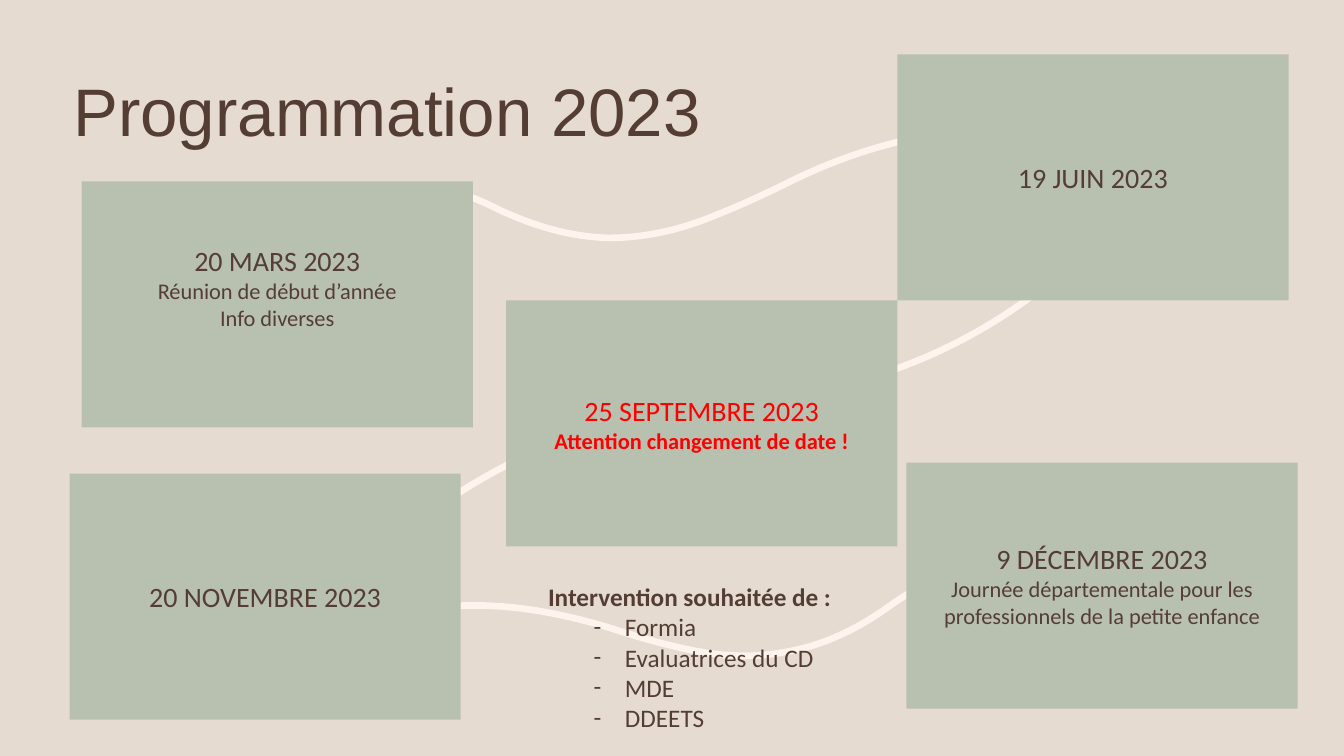
import pptx
import pptx.util
import pptx.dml.color
import pptx.enum.shapes
import pptx.enum.text
import pptx.oxml.ns
import lxml.etree
from dataclasses import dataclass

Inches, Pt = pptx.util.Inches, pptx.util.Pt
RGB = pptx.dml.color.RGBColor.from_string
ALIGN = pptx.enum.text.PP_ALIGN
ANCHOR = pptx.enum.text.MSO_ANCHOR


@dataclass
class Theme:
    back: str = "E6DBD0"
    card: str = "B8C0B0"
    wave: str = "FEF3ED"
    ink: str = "543E34"
    alert: str = "FF0000"
    head: str = "Arial"
    body: str = "Calibri"
    title: int = 48
    date: int = 20
    note: int = 16
    list: int = 18


theme = Theme()


def write(frame, lines):
    """Fill a frame with one paragraph for each (text, align, format)."""
    frame.word_wrap = True
    for i, (text, align, form) in enumerate(lines):
        para = frame.paragraphs[0] if i == 0 else frame.add_paragraph()
        para.alignment = align
        run = para.add_run()
        run.text = text
        run.font.color.rgb = RGB(form["color"])
        for key in ("name", "size", "bold"):
            setattr(run.font, key, form[key])


def style(size, color=theme.ink, name=theme.body, bold=False):
    return {"name": name, "size": Pt(size), "bold": bold, "color": color}


deck = pptx.Presentation()
deck.slide_width, deck.slide_height = Inches(13.33), Inches(7.5)
slide = deck.slides.add_slide(deck.slide_layouts[6])
slide.background.fill.solid()
slide.background.fill.fore_color.rgb = RGB(theme.back)
shapes = slide.shapes

# Waves: a start point, then cubic curves of three points each
waves = [
    [(8.33, 3.83), (9.13, 3.63), (9.85, 3.27), (10.47, 2.75)],
    [(5.84, 4.28), (5.09, 4.52), (4.45, 4.9), (3.89, 5.39)],
    [(3.07, 2.23), (3.5, 1.87), (3.98, 1.77), (4.49, 1.9),
     (4.66, 1.94), (4.81, 2.01), (4.97, 2.09),
     (5.3, 2.24), (5.65, 2.35), (6.04, 2.36),
     (6.37, 2.36), (6.7, 2.29), (7.01, 2.17),
     (7.37, 2.03), (7.57, 1.93), (7.78, 1.83),
     (8.01, 1.71), (9.4, 1.03), (10.27, 1.46)],
    [(9.2, 5.79), (9.04, 5.86), (8.91, 5.95), (8.77, 6.05),
     (8.48, 6.25), (8.15, 6.41), (7.78, 6.47),
     (7.46, 6.53), (7.14, 6.51), (6.81, 6.44),
     (6.45, 6.36), (6.24, 6.29), (6.02, 6.22),
     (5.78, 6.15), (4.34, 5.7), (3.47, 6.36)],
]
steps = 16
for wave in waves:
    dots = []
    for i in range(0, len(wave) - 1, 3):
        for k in range(1, steps + 1):
            t = k / steps
            mix = ((1 - t) ** 3, 3 * t * (1 - t) ** 2, 3 * t * t * (1 - t), t ** 3)
            dots.append([Inches(sum(m * p[axis] for m, p in zip(mix, wave[i:i + 4])))
                         for axis in (0, 1)])
    pen = shapes.build_freeform(Inches(wave[0][0]), Inches(wave[0][1]))
    pen.add_line_segments(dots, close=False)
    curve = pen.convert_to_shape()
    curve.shadow.inherit = False
    curve.fill.background()
    curve.line.color.rgb = RGB(theme.wave)
    curve.line.width = Pt(4.75)

title = shapes.add_textbox(Inches(0.63), Inches(0.77), Inches(10), Inches(0.74))
title.text_frame.vertical_anchor = ANCHOR.MIDDLE
write(title.text_frame, [("Programmation 2023", ALIGN.LEFT,
                          style(theme.title, name=theme.head))])
title.text_frame.paragraphs[0].line_spacing = 0.9

# Cards: left, top, colour, bold notes, space below the text, date, notes
cards = [
    (0.81, 1.8, theme.ink, False, 0.39, "20 MARS 2023",
     ["Réunion de début d’année", "Info diverses"]),
    (8.9, 0.54, theme.ink, False, 0.05, "19 JUIN 2023", []),
    (5.02, 2.98, theme.alert, True, 0.05, "25 SEPTEMBRE 2023",
     ["Attention changement de date !"]),
    (0.69, 4.7, theme.ink, False, 0.05, "20 NOVEMBRE 2023", []),
    (8.99, 4.59, theme.ink, False, 0.05, "9 DÉCEMBRE 2023",
     ["Journée départementale pour les professionnels de la petite enfance"]),
]
for left, top, color, bold, below, date, notes in cards:
    card = shapes.add_shape(pptx.enum.shapes.MSO_SHAPE.RECTANGLE, Inches(left),
                            Inches(top), Inches(3.88), Inches(2.44))
    card.shadow.inherit = False
    card.fill.solid()
    card.fill.fore_color.rgb = RGB(theme.card)
    card.line.fill.background()
    card.text_frame.vertical_anchor = ANCHOR.MIDDLE
    card.text_frame.margin_bottom = Inches(below)
    write(card.text_frame,
          [(date, ALIGN.CENTER, style(theme.date, color))]
          + [(note, ALIGN.CENTER, style(theme.note, color, bold=bold))
             for note in notes])

guests = ["Formia", "Evaluatrices du CD", "MDE", "DDEETS"]
box = shapes.add_textbox(Inches(4.79), Inches(5.72), Inches(4.1), Inches(1.62))
write(box.text_frame,
      [("Intervention souhaitée de :", ALIGN.CENTER, style(theme.list, bold=True))]
      + [(guest, ALIGN.LEFT, style(theme.list)) for guest in guests])
for para in box.text_frame.paragraphs[1:]:
    props = para._p.get_or_add_pPr()
    props.set("marL", str(Inches(1.31)))
    props.set("indent", str(Inches(-0.31)))
    for tag, key, value in (("a:buFont", "typeface", theme.body),
                            ("a:buChar", "char", "-")):
        mark = lxml.etree.SubElement(props, pptx.oxml.ns.qn(tag))
        mark.set(key, value)

deck.save("out.pptx")
